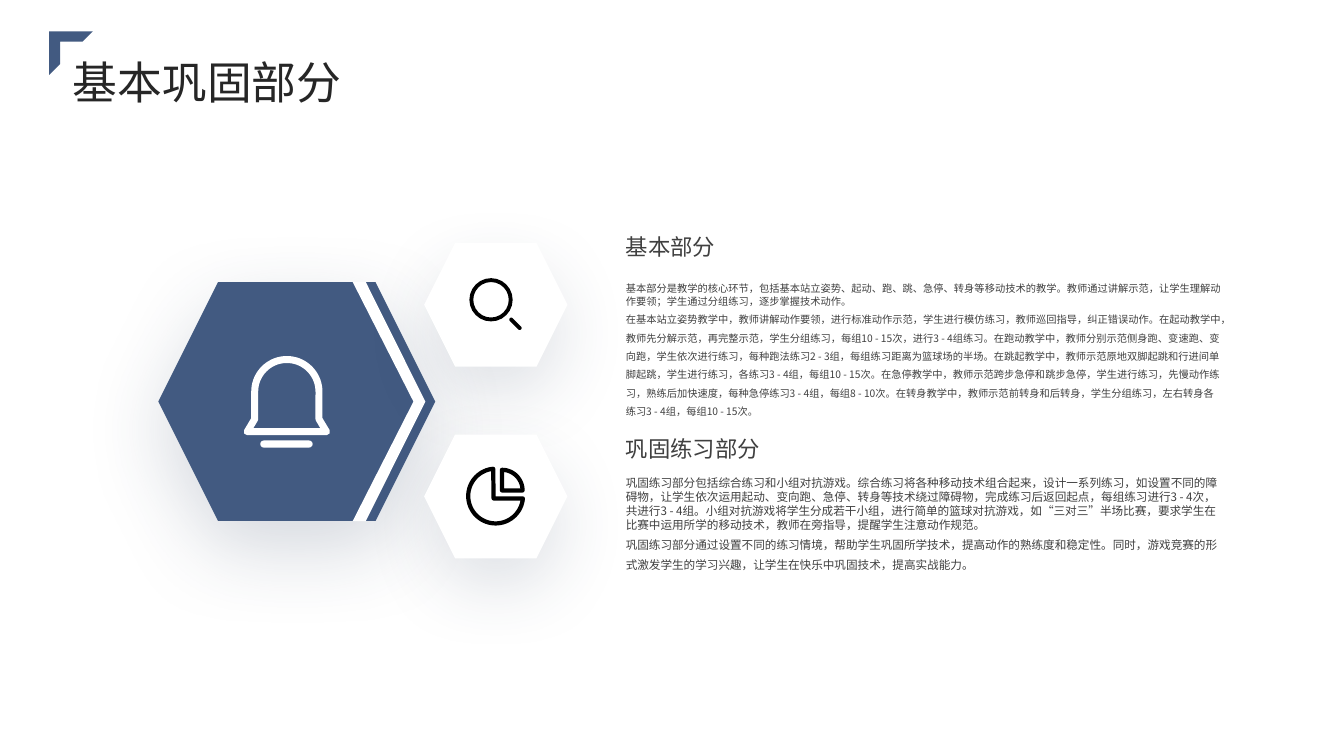
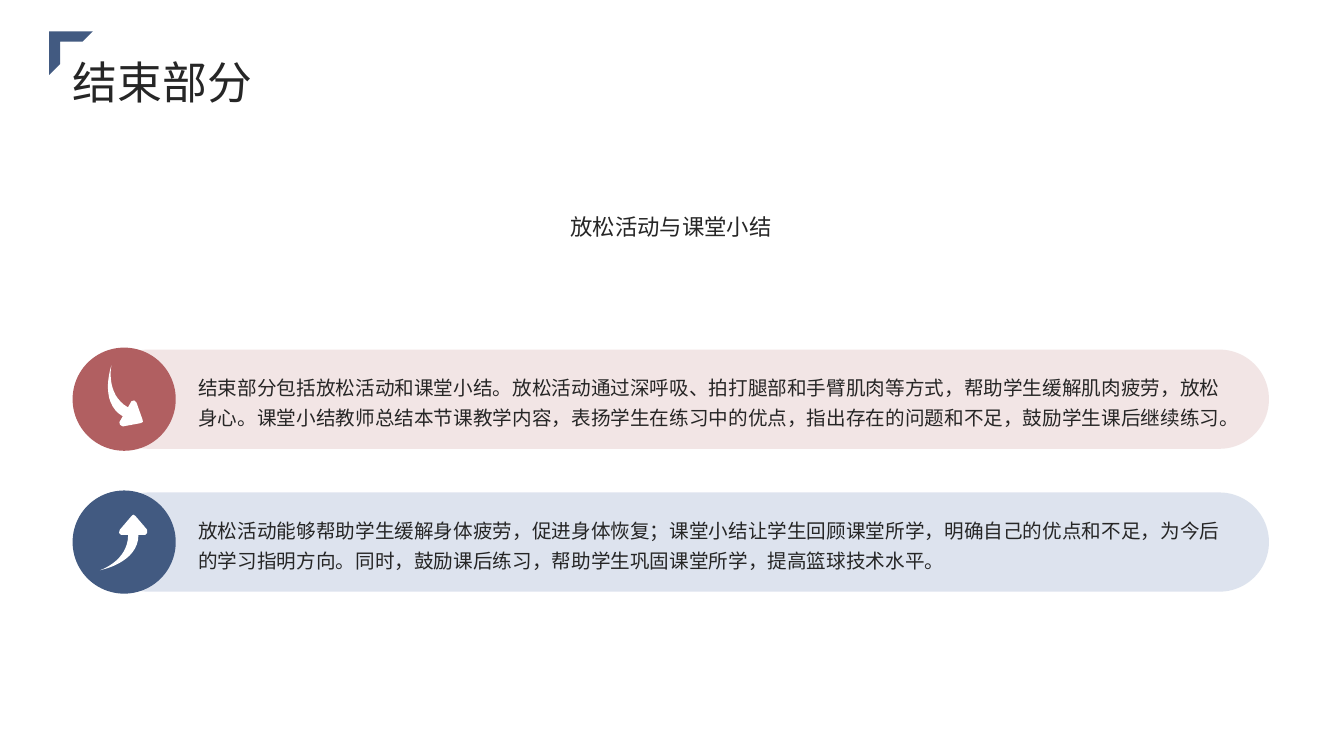
from math import cos, radians, sin

from lxml.etree import SubElement
from pptx import Presentation
from pptx.dml.color import RGBColor
from pptx.enum.shapes import MSO_SHAPE
from pptx.enum.text import MSO_ANCHOR, MSO_AUTO_SIZE, PP_ALIGN
from pptx.oxml.ns import qn
from pptx.util import Cm, Pt

NAVY = RGBColor(0x42, 0x5A, 0x81)
SHADE = RGBColor(0x31, 0x43, 0x61)
ROSE = RGBColor(0xB1, 0x5F, 0x61)
PINK = RGBColor(0xEF, 0xDF, 0xDF)
PALE = RGBColor(0xD5, 0xDD, 0xEA)
WHITE = RGBColor(0xFF, 0xFF, 0xFF)
BLACK = RGBColor(0, 0, 0)
INK = RGBColor(0x26, 0x26, 0x26)
GRAY = RGBColor(0x40, 0x40, 0x40)
FONT = "Noto Sans CJK SC"

FRAME = dict(margin_left=0, margin_right=0, margin_top=0, margin_bottom=0,
             word_wrap=True, auto_size=MSO_AUTO_SIZE.NONE)
LEFT = dict(alignment=PP_ALIGN.LEFT, space_before=Pt(0), space_after=Pt(0))
MID, TOP = MSO_ANCHOR.MIDDLE, MSO_ANCHOR.TOP

BASIC = [
    ("基本部分是教学的核心环节，包括基本站立姿势、起动、跑、跳、急停、转身等移动技术的教学。教师通过讲解示范，让学生理解动作要领；学生通过分组练习，逐步掌握技术动作。", Pt(9.4)),
    ("在基本站立姿势教学中，教师讲解动作要领，进行标准动作示范，学生进行模仿练习，教师巡回指导，纠正错误动作。在起动教学中，教师先分解示范，再完整示范，学生分组练习，每组10 - 15次，进行3 - 4组练习。在跑动教学中，教师分别示范侧身跑、变速跑、变向跑，学生依次进行练习，每种跑法练习2 - 3组，每组练习距离为篮球场的半场。在跳起教学中，教师示范原地双脚起跳和行进间单脚起跳，学生进行练习，各练习3 - 4组，每组10 - 15次。在急停教学中，教师示范跨步急停和跳步急停，学生进行练习，先慢动作练习，熟练后加快速度，每种急停练习3 - 4组，每组8 - 10次。在转身教学中，教师示范前转身和后转身，学生分组练习，左右转身各练习3 - 4组，每组10 - 15次。", Pt(13.1)),
]
DRILL = [
    ("巩固练习部分包括综合练习和小组对抗游戏。综合练习将各种移动技术组合起来，设计一系列练习，如设置不同的障碍物，让学生依次运用起动、变向跑、急停、转身等技术绕过障碍物，完成练习后返回起点，每组练习进行3 - 4次，共进行3 - 4组。小组对抗游戏将学生分成若干小组，进行简单的篮球对抗游戏，如“三对三”半场比赛，要求学生在比赛中运用所学的移动技术，教师在旁指导，提醒学生注意动作规范。", Pt(10)),
    ("巩固练习部分通过设置不同的练习情境，帮助学生巩固所学技术，提高动作的熟练度和稳定性。同时，游戏竞赛的形式激发学生的学习兴趣，让学生在快乐中巩固技术，提高实战能力。", Pt(14.4)),
]
RELAX = "结束部分包括放松活动和课堂小结。放松活动通过深呼吸、拍打腿部和手臂肌肉等方式，帮助学生缓解肌肉疲劳，放松身心。课堂小结教师总结本节课教学内容，表扬学生在练习中的优点，指出存在的问题和不足，鼓励学生课后继续练习。"
REVIEW = "放松活动能够帮助学生缓解身体疲劳，促进身体恢复；课堂小结让学生回顾课堂所学，明确自己的优点和不足，为今后的学习指明方向。同时，鼓励课后练习，帮助学生巩固课堂所学，提高篮球技术水平。"


def assign(item, values):
    for key, value in values.items():
        setattr(item, key, value)


def place(item, box):
    assign(item, dict(zip(("left", "top", "width", "height"), map(Cm, box))))


def write(shape, lines, size, color, anchor=MID, align=PP_ALIGN.LEFT):
    frame = shape.text_frame
    assign(frame, {**FRAME, "vertical_anchor": anchor})
    for count, (text, space) in enumerate(lines):
        para = frame.add_paragraph() if count else frame.paragraphs[0]
        props = para._p.get_or_add_pPr()
        props.set("marL", "0")
        props.set("indent", "0")
        SubElement(props, qn("a:buNone"))
        assign(para, {**LEFT, "alignment": align, "line_spacing": space})
        run = para.add_run()
        run.text = text
        assign(run.font, dict(name=FONT, size=Pt(size), bold=False))
        run.font.color.rgb = color
        SubElement(run._r.get_or_add_rPr(), qn("a:ea")).set("typeface", FONT)


def label(slide, box, lines, size, color, **look):
    shape = slide.shapes.add_textbox(*map(Cm, box))
    write(shape, lines, size, color, **look)


def paint(shape, fill):
    shape.shadow.inherit = False
    shape.fill.solid()
    shape.fill.fore_color.rgb = fill
    shape.line.fill.background()
    return shape


def fade(node, share):
    SubElement(node, qn("a:alpha")).set("val", str(share * 1000))


def draw(slide, kind, box, fill, adjust=(), turn=0):
    shape = paint(slide.shapes.add_shape(kind, *map(Cm, box)), fill)
    for place_no, value in enumerate(adjust):
        shape.adjustments[place_no] = value
    shape.rotation = turn
    return shape


def glow(shape, share, blur):
    effects = shape._element.spPr.find(qn("a:effectLst"))
    outer = SubElement(effects, qn("a:outerShdw"))
    values = dict(blurRad=Pt(blur), dist=Pt(20), dir=90 * 60000, rotWithShape=0)
    for key, value in values.items():
        outer.set(key, str(int(value)))
    color = SubElement(outer, qn("a:srgbClr"))
    color.set("val", str(SHADE))
    fade(color, share)


def trace(slide, x, y, points):
    spots = [(Cm(x + px), Cm(y + py)) for px, py in points]
    pen = slide.shapes.build_freeform(*spots[0], scale=1.0)
    pen.add_line_segments(spots[1:], close=True)
    return pen.convert_to_shape()


def stroke(slide, x, y, points, color, width):
    shape = trace(slide, x, y, points)
    shape.shadow.inherit = False
    shape.fill.background()
    shape.line.color.rgb = color
    shape.line.width = Pt(width)
    SubElement(shape._element.spPr.find(qn("a:ln")), qn("a:round"))


def arc(x, y, radius, start, end, step=5):
    return [(x + radius * cos(radians(a)), y + radius * sin(radians(a)))
            for a in range(start, end + 1, step)]


def curve(*knots, count=16):
    result = []
    for i in range(count + 1):
        t = i / count
        rates = ((1 - t) ** 3, 3 * t * (1 - t) ** 2, 3 * t * t * (1 - t), t ** 3)
        result.append(tuple(sum(r * k[axis] for r, k in zip(rates, knots))
                            for axis in (0, 1)))
    return result


def base(deck, layout, title):
    slide = deck.slides.add_slide(deck.slide_layouts[layout])
    place(slide.shapes.title, (1.83, 1.35, 30.18, 1.3))
    write(slide.shapes.title, [(title, 1.1)], 32, INK)
    draw(slide, MSO_SHAPE.HALF_FRAME, (1.24, 0.79, 1.1, 1.1), NAVY, (0.239, 0.252))
    return slide


def bell(slide, x, y):
    dome = arc(3.24, 2.76, 0.81, 180, 360)
    points = [(2.24, 3.77), (2.43, 3.45), *dome, (4.05, 3.45), (4.24, 3.77)]
    stroke(slide, x, y, points, WHITE, 5)
    draw(slide, MSO_SHAPE.ROUNDED_RECTANGLE, (x + 2.57, y + 3.99, 1.32, 0.18),
         WHITE, (0.5,))


def lens(slide, x, y):
    draw(slide, MSO_SHAPE.DONUT, (x + 1.14, y + 0.89, 1.09, 1.09), BLACK, (0.09,))
    draw(slide, MSO_SHAPE.ROUNDED_RECTANGLE, (x + 2.1, y + 1.99, 0.4, 0.1),
         BLACK, (0.5,), 45)


def pie(slide, x, y):
    stroke(slide, x, y, [(1.75, 1.61), *arc(1.8, 1.55, 0.69, 5, 265)], BLACK, 3)
    stroke(slide, x, y, [(1.96, 1.41), *arc(1.96, 1.41, 0.52, 270, 360)], BLACK, 3)


def hive(slide, x, y):
    big = draw(slide, MSO_SHAPE.HEXAGON, (x, y, 6.98, 6.02), NAVY)
    glow(big, 20, 60)
    for icon, top in ((lens, y - 0.99), (pie, y + 3.84)):
        cell = draw(slide, MSO_SHAPE.HEXAGON, (x + 6.7, top, 3.61, 3.12), WHITE)
        glow(cell, 15, 50)
        icon(slide, x + 6.7, top)
    edge = [(5.23, 0), (4.9, 0), (6.43, 3.01), (4.9, 6.02), (5.23, 6.02), (6.73, 3.01)]
    paint(trace(slide, x, y, edge), WHITE)
    bell(slide, x, y)


def column(slide, x, y, width):
    parts = ((1, 2, "基本部分", BASIC, 7.3, y, 1.68),
             (3, 4, "巩固练习部分", DRILL, 8.3, y + 5.08, 1.5))
    for head, body, title, lines, size, top, gap in parts:
        place(slide.placeholders[head], (x, top, width, 1.27))
        write(slide.placeholders[head], [(title, 1.5)], 16, GRAY)
        place(slide.placeholders[body], (x, top + gap, width, 3.3))
        write(slide.placeholders[body], lines, size, GRAY, TOP)


def arrow(slide, x, y, turn):
    tail = curve((0.71, 0.51), (0.71, 1.17), (0, 1.4), (0, 1.4))
    back = curve((0, 1.4), (0, 1.4), (0.97, 1.22), (0.97, 0.51))
    points = [(1.19, 0.38), (0.89, 0.03), (0.84, 0), (0.8, 0.03), (0.5, 0.38),
              (0.48, 0.46), (0.53, 0.51), *tail, *back, (1.14, 0.51), (1.19, 0.46)]
    paint(trace(slide, x, y, points), WHITE).rotation = turn


def strip(slide, x, y, text, dark, light, turn):
    bar = draw(slide, MSO_SHAPE.ROUNDED_RECTANGLE, (x + 0.66, y + 0.05, 29.49, 2.5),
               light, (0.5,))
    fade(bar._element.spPr.find(qn("a:solidFill"))[0], 80)
    draw(slide, MSO_SHAPE.OVAL, (x, y, 2.6, 2.6), dark)
    label(slide, (x + 3.17, y + 0.3, 26.01, 2), [(text, 1.3)], 14, INK)
    arrow(slide, x + 0.69, y + 0.61, turn)


def main():
    deck = Presentation()
    assign(deck, dict(slide_width=Cm(33.87), slide_height=Cm(19.05)))
    core = base(deck, 4, "基本巩固部分")
    hive(core, 3.99, 7.11)
    column(core, 15.77, 5.41, 15.01)
    close = base(deck, 5, "结束部分")
    label(close, (3.3, 5.23, 27.23, 2.34), [("放松活动与课堂小结", 1.2)], 16, INK,
          anchor=TOP, align=PP_ALIGN.CENTER)
    rows = ((RELAX, ROSE, PINK, 120), (REVIEW, NAVY, PALE, 0))
    for count, row in enumerate(rows):
        strip(close, 1.83, 8.76 + count * 3.6, *row)
    deck.save("out.pptx")


if __name__ == "__main__":
    main()
